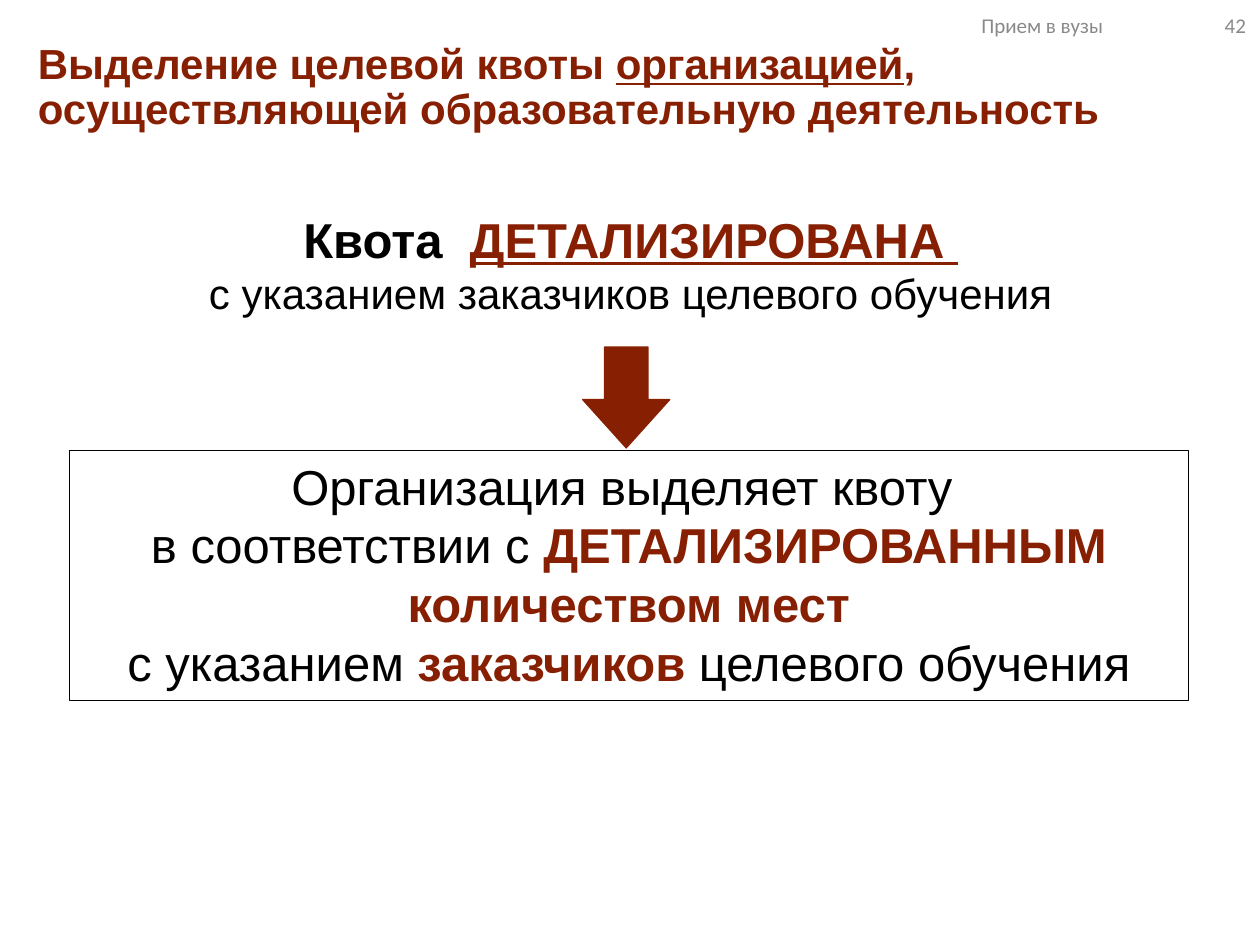
from lxml.etree import SubElement
from pptx import Presentation
from pptx.dml.color import RGBColor
from pptx.enum.shapes import MSO_SHAPE
from pptx.enum.text import MSO_ANCHOR, PP_ALIGN
from pptx.oxml.ns import qn
from pptx.util import Inches, Pt

BLACK = RGBColor(0x00, 0x00, 0x00)
WHITE = RGBColor(0xFF, 0xFF, 0xFF)
BROWN = RGBColor(0x87, 0x1F, 0x03)
GRAY = RGBColor(0x89, 0x89, 0x89)

PLAIN = {}
BOLD = {"bold": True}
ACCENT = {"color": BROWN, "bold": True}
UNDERLINED = {"color": BROWN, "bold": True, "underline": True}


class SlideBuilder:
    def __init__(self, slide, font="Arial"):
        self.slide = slide
        self.font = font

    def add_run(self, paragraph, text, size, color=BLACK, bold=False, underline=False, font=None):
        run = paragraph.add_run()
        run.text = text
        run.font.name = font or self.font
        run.font.size = Pt(size)
        run.font.color.rgb = color
        run.font.bold = bold
        run.font.underline = underline

    def place(self, shape, left, top, width, height):
        shape.left, shape.top = Inches(left), Inches(top)
        shape.width, shape.height = Inches(width), Inches(height)

    def title(self, box, runs, size):
        shape = self.slide.shapes.title
        self.place(shape, *box)
        frame = shape.text_frame
        frame.word_wrap = True
        frame.vertical_anchor = MSO_ANCHOR.TOP
        paragraph = frame.paragraphs[0]
        paragraph.alignment = PP_ALIGN.LEFT
        paragraph.line_spacing = 0.9
        for text, style in runs:
            self.add_run(paragraph, text, size, **style)

    def shape(self, kind, box, fill, line=None, line_width=0.75):
        shape = self.slide.shapes.add_shape(kind, *map(Inches, box))
        shape.shadow.inherit = False
        shape.fill.solid()
        shape.fill.fore_color.rgb = fill
        if line is None:
            shape.line.fill.background()
        else:
            shape.line.color.rgb = line
            shape.line.width = Pt(line_width)
        return shape

    def text_panel(self, box, lines, line=None):
        """Add a white box; each line is a size and its (text, style) runs."""
        frame = self.shape(MSO_SHAPE.RECTANGLE, box, WHITE, line, 0.25).text_frame
        frame.word_wrap = True
        frame.vertical_anchor = MSO_ANCHOR.TOP
        for index, (size, runs) in enumerate(lines):
            paragraph = frame.add_paragraph() if index else frame.paragraphs[0]
            paragraph.alignment = PP_ALIGN.CENTER
            for text, style in runs:
                self.add_run(paragraph, text, size, **style)

    def down_arrow(self, box):
        arrow = self.shape(MSO_SHAPE.RIGHT_ARROW, box, BROWN, BROWN)
        arrow.adjustments[1] = 0.555
        arrow.rotation = 90

    def page_header(self, box, section, number, tab_stops):
        frame = self.slide.shapes.add_textbox(*map(Inches, box)).text_frame
        frame.word_wrap = True
        frame.vertical_anchor = MSO_ANCHOR.MIDDLE
        paragraph = frame.paragraphs[0]
        tab_list = SubElement(paragraph._p.get_or_add_pPr(), qn("a:tabLst"))
        for position, alignment in tab_stops:
            SubElement(tab_list, qn("a:tab"), pos=str(Inches(position)), algn=alignment)
        self.add_run(paragraph, f"\t{section}\t{number}", 12, GRAY, font="Calibri")


def main():
    presentation = Presentation()
    presentation.slide_width, presentation.slide_height = Inches(10), Inches(7.5)
    builder = SlideBuilder(presentation.slides.add_slide(presentation.slide_layouts[5]))

    builder.title((0.2, 0.29, 9.8, 0.47), [
        ("Выделение целевой квоты ", ACCENT),
        ("организацией", UNDERLINED),
        (", осуществляющей образовательную деятельность", ACCENT),
    ], 24)
    builder.text_panel((1.52, 1.61, 6.97, 0.98), [
        (28, [("Квота  ", BOLD), ("ДЕТАЛИЗИРОВАНА ", UNDERLINED)]),
        (24, [("с указанием заказчиков целевого обучения", PLAIN)]),
    ])
    builder.text_panel((0.55, 3.57, 8.88, 1.99), [
        (28, [("Организация выделяет квоту ", PLAIN)]),
        (28, [("в соответствии с ", PLAIN), ("ДЕТАЛИЗИРОВАННЫМ", ACCENT)]),
        (28, [("количеством мест", ACCENT)]),
        (28, [("с указанием ", PLAIN), ("заказчиков", ACCENT), (" целевого обучения", PLAIN)]),
    ], line=BLACK)
    builder.down_arrow((4.57, 2.81, 0.8, 0.69))
    builder.page_header((7.05, 0, 2.95, 0.4), "Прием в вузы", 42, [(0.64, "l"), (2.74, "r")])

    presentation.save("out.pptx")


if __name__ == "__main__":
    main()
